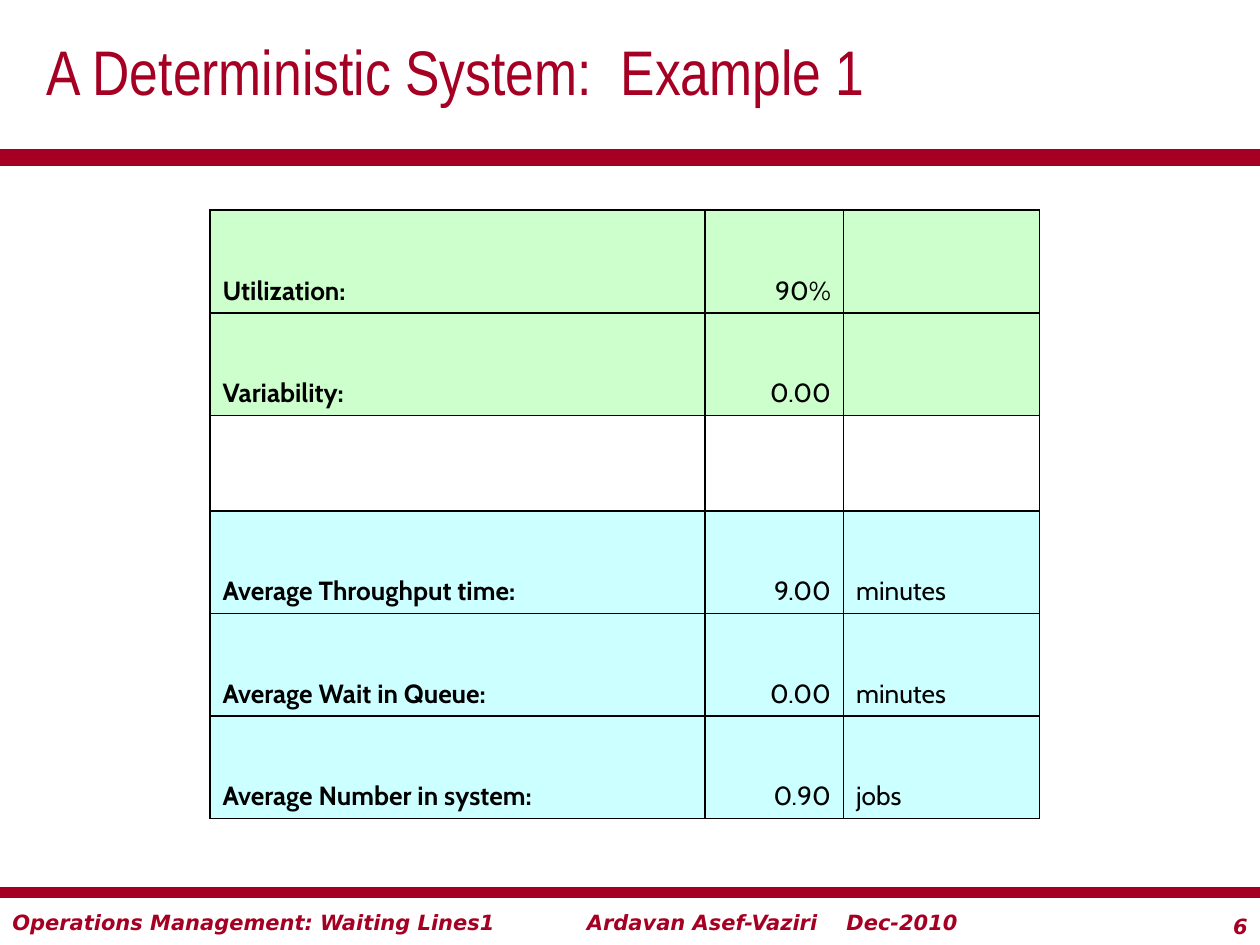
from lxml import etree
from pptx import Presentation
from pptx.dml.color import RGBColor
from pptx.enum.shapes import MSO_CONNECTOR
from pptx.enum.text import MSO_ANCHOR, PP_ALIGN
from pptx.oxml import parse_xml
from pptx.oxml.ns import qn
from pptx.util import Pt

LINE = MSO_CONNECTOR.STRAIGHT
LEFT, RIGHT = PP_ALIGN.LEFT, PP_ALIGN.RIGHT
MIDDLE, BOTTOM = MSO_ANCHOR.MIDDLE, MSO_ANCHOR.BOTTOM
RED, BLACK, GREEN, BLUE = "A50023", "000000", "CCFFCC", "CCFFFF"
NS = "http://schemas.openxmlformats.org/drawingml/2006/main"


def color(code):
    return RGBColor.from_string(code)


def style(para, face, size, code, bold=False, italic=False):
    for run in para.runs:
        font = run.font
        font.name, font.size = face, Pt(size)
        font.bold, font.italic = bold, italic
        font.color.rgb = color(code)


deck = Presentation()
deck.slide_width, deck.slide_height = Pt(720), Pt(540)
slide = deck.slides.add_slide(deck.slide_layouts[5])
shapes = slide.shapes

footer = [
    ("6", 666, 518.4, 54, RIGHT),
    ("Ardavan Asef-Vaziri    Dec-2010", 328.3, 516.2, 241.2, LEFT),
    ("Operations Management: Waiting Lines1", 0, 516.2, 336.2, LEFT),
]
for text, x, y, width, align in footer:
    frame = shapes.add_textbox(Pt(x), Pt(y), Pt(width), Pt(21.6)).text_frame
    frame.word_wrap = True
    frame.text = text
    para = frame.paragraphs[0]
    para.alignment = align
    style(para, "DejaVu Sans", 12, RED, True, True)

for y, weight in [(90, 10), (510, 6)]:
    bar = shapes.add_connector(LINE, Pt(0), Pt(y), Pt(720), Pt(y))
    bar.line.color.rgb = color(RED)
    bar.line.width = Pt(weight)
    etree.SubElement(bar._element.spPr, qn("a:effectLst"))

title = shapes.title
title.left, title.top = Pt(19.5), Pt(0)
title.width, title.height = Pt(700.5), Pt(80)
frame = title.text_frame
frame.text = "A Deterministic System:  Example 1"
frame.vertical_anchor = MIDDLE
frame.paragraphs[0].alignment = LEFT
style(frame.paragraphs[0], "Arial Narrow", 36, RED)

rows = [
    ("Utilization:", "90%", "", GREEN, 59),
    ("Variability:", "0.00", "", GREEN, 58.5),
    ("", "", "", None, 54.7),
    ("Average Throughput time:", "9.00", "minutes", BLUE, 58.5),
    ("Average Wait in Queue:", "0.00", "minutes", BLUE, 58.5),
    ("Average Number in system:", "0.90", "jobs", BLUE, 58.5),
]
widths = [283, 79, 112]
total = sum(row[4] for row in rows)
table = shapes.add_table(
    len(rows), len(widths), Pt(120), Pt(120), Pt(sum(widths)), Pt(total)
).table
table.first_row = table.horz_banding = False
for col, width in zip(table.columns, widths):
    col.width = Pt(width)

for r, (*texts, fill, height) in enumerate(rows):
    table.rows[r].height = Pt(height)
    for c, text in enumerate(texts):
        cell = table.cell(r, c)
        cell.text = text
        cell.vertical_anchor = BOTTOM
        para = cell.text_frame.paragraphs[0]
        para.alignment = RIGHT if c == 1 else LEFT
        para.line_spacing = 1.15
        props = para._p.get_or_add_pPr()
        props.set("marL", str(Pt(27)))
        props.set("indent", str(-Pt(27)))
        style(para, "Cabin", 15, BLACK, c == 0)
        if fill:
            cell.fill.solid()
            cell.fill.fore_color.rgb = color(fill)
        else:
            cell.fill.background()
        for n, side in enumerate(["lnL", "lnR", "lnT", "lnB"]):
            edge = parse_xml(
                f'<a:{side} xmlns:a="{NS}" w="{Pt(1)}"><a:solidFill>'
                f'<a:srgbClr val="{BLACK}"/></a:solidFill></a:{side}>'
            )
            cell._tc.get_or_add_tcPr().insert(n, edge)

deck.save("out.pptx")
